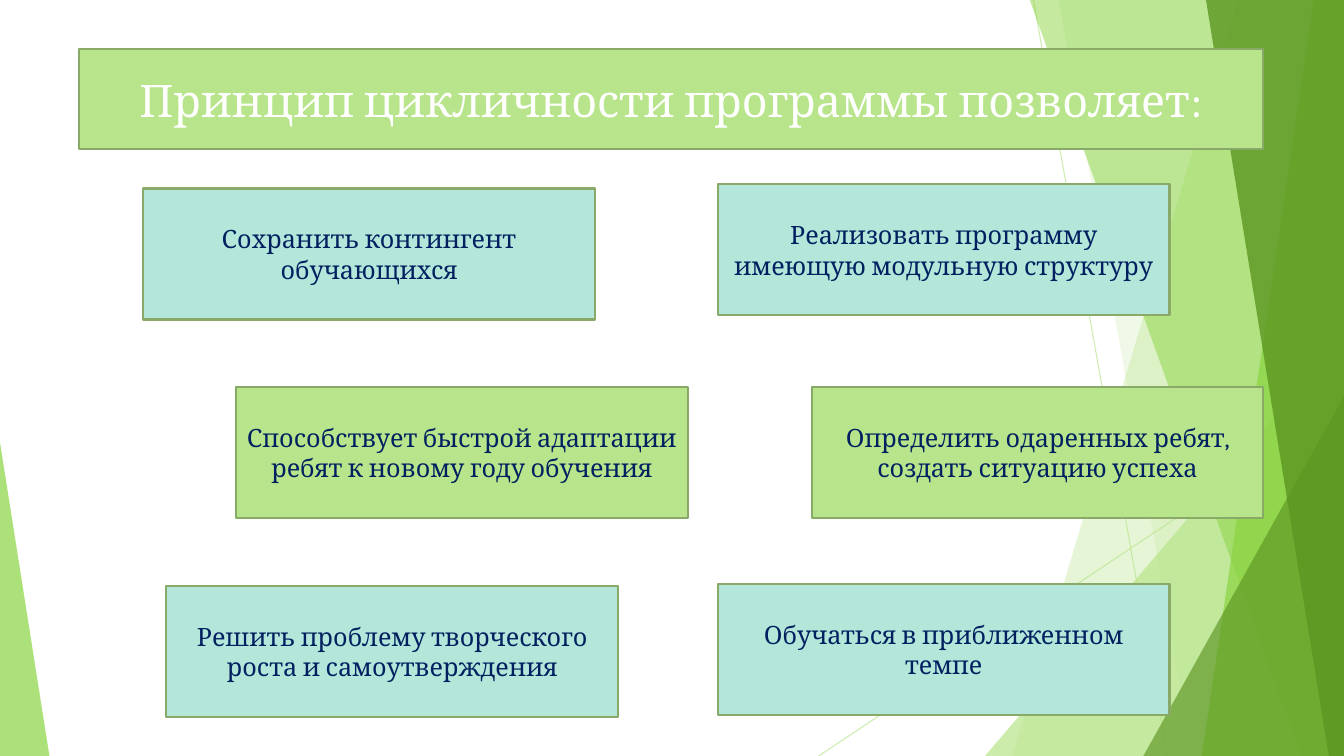
from lxml import etree
from pptx import Presentation
from pptx import util as u
from pptx.dml.color import RGBColor
from pptx.enum import shapes, text
from pptx.oxml import ns

PALE = RGBColor(0xB8, 0xE5, 0x8B)
LIME = RGBColor(0x8A, 0xD4, 0x40)
DARK = RGBColor(0x5C, 0x96, 0x22)
MINT = RGBColor(0xB4, 0xE6, 0xDA)
EDGE = RGBColor(0x88, 0xA9, 0x67)
NAVY = RGBColor(0x00, 0x20, 0x60)
WHITE = RGBColor(0xFF, 0xFF, 0xFF)

WIDE, HIGH, TOP = 13.33, 7.5, -0.01
BOX = (4.48, 1.3)
FRAME = {"word_wrap": True, "auto_size": text.MSO_AUTO_SIZE.NONE,
         "vertical_anchor": text.MSO_ANCHOR.MIDDLE}


def assign(target, values):
    for name, value in values.items():
        setattr(target, name, value)


class Painter:
    face = "Cambria"

    def __init__(self, slide):
        self.slide = slide
        self.shapes = slide.shapes

    def fade(self, shape, alpha):
        color = shape.element.spPr.find(".//" + ns.qn("a:srgbClr"))
        etree.SubElement(color, ns.qn("a:alpha"), val=str(alpha * 1000))

    def tint(self, shape, color, alpha):
        shape.shadow.inherit = False
        shape.fill.solid()
        shape.fill.fore_color.rgb = color
        shape.line.fill.background()
        self.fade(shape, alpha)

    def ray(self, *ends):
        line = self.shapes.add_connector(
            shapes.MSO_CONNECTOR.STRAIGHT, *map(u.Inches, ends))
        line.line.color.rgb = PALE
        line.line.width = u.Pt(0.75)
        self.fade(line, 70)
        etree.SubElement(line.element.spPr, ns.qn("a:effectLst"))

    def shard(self, upper, lower, color, alpha):
        points = [(upper, TOP), (WIDE, TOP), (WIDE, HIGH), (lower, HIGH)]
        points = [(u.Inches(x), u.Inches(y)) for x, y in points]
        path = self.shapes.build_freeform(*points[0])
        path.add_line_segments(points[1:], close=True)
        self.tint(path.convert_to_shape(), color, alpha)

    def wedge(self, left, top, width, apex, color, alpha):
        shape = self.shapes.add_shape(
            shapes.MSO_SHAPE.ISOSCELES_TRIANGLE,
            *map(u.Inches, (left, top, width, HIGH - top)))
        shape.adjustments[0] = apex
        self.tint(shape, color, alpha)

    def panel(self, shape, words, fill, color, size):
        shape.fill.solid()
        shape.fill.fore_color.rgb = fill
        shape.line.color.rgb = EDGE
        shape.line.width = u.Pt(1.5)
        shape.shadow.inherit = False
        assign(shape.text_frame, FRAME)
        para = shape.text_frame.paragraphs[0]
        para.alignment = text.PP_ALIGN.CENTER
        run = para.add_run()
        run.text = words
        assign(run.font, {"name": self.face, "size": u.Pt(size)})
        run.font.color.rgb = color

    def card(self, left, top, fill, words):
        shape = self.shapes.add_shape(
            shapes.MSO_SHAPE.RECTANGLE, *map(u.Inches, (left, top, *BOX)))
        self.panel(shape, words, fill, NAVY, 18)

    def title(self, words, left, top, width, height):
        shape = self.shapes.title
        assign(shape, {"left": u.Inches(left), "top": u.Inches(top),
                       "width": u.Inches(width), "height": u.Inches(height)})
        form = etree.SubElement(
            shape.element.spPr, ns.qn("a:prstGeom"), prst="round2SameRect")
        etree.SubElement(form, ns.qn("a:avLst"))
        self.panel(shape, words, PALE, WHITE, 32)
        shape.element.getparent().append(shape.element)


def main():
    deck = Presentation()
    deck.slide_width, deck.slide_height = u.Inches(WIDE), u.Inches(HIGH)
    paint = Painter(deck.slides.add_slide(deck.slide_layouts[5]))

    paint.ray(10.25, 0, 11.58, HIGH)
    paint.ray(WIDE, 4.03, 8.12, HIGH)
    paint.shard(12.28, 10.04, PALE, 36)
    paint.shard(10.5, 11.83, PALE, 20)
    paint.wedge(9.77, 3.33, 3.56, 1, PALE, 72)
    paint.shard(10.21, 12.91, LIME, 50)
    paint.shard(13.03, 11.92, LIME, 70)
    paint.shard(11.96, 13.18, DARK, 80)
    paint.wedge(11.34, 3.93, 1.99, 1, DARK, 66)
    paint.wedge(0, 4.39, 0.49, 0, LIME, 70)

    for card in (
        (1.42, 1.87, MINT, "Сохранить контингент обучающихся"),
        (8.05, 3.84, PALE, "Определить одаренных ребят, создать ситуацию успеха"),
        (7.12, 1.83, MINT, "Реализовать программу имеющую модульную структуру"),
        (2.34, 3.84, PALE,
         "Способствует быстрой адаптации ребят к новому году обучения"),
        (7.12, 5.79, MINT, "Обучаться в приближенном темпе"),
        (1.65, 5.81, MINT, "Решить проблему творческого роста и самоутверждения"),
    ):
        paint.card(*card)

    paint.title("Принцип цикличности программы позволяет:", 0.78, 0.49, 11.75, 0.99)
    deck.save("out.pptx")


if __name__ == "__main__":
    main()
